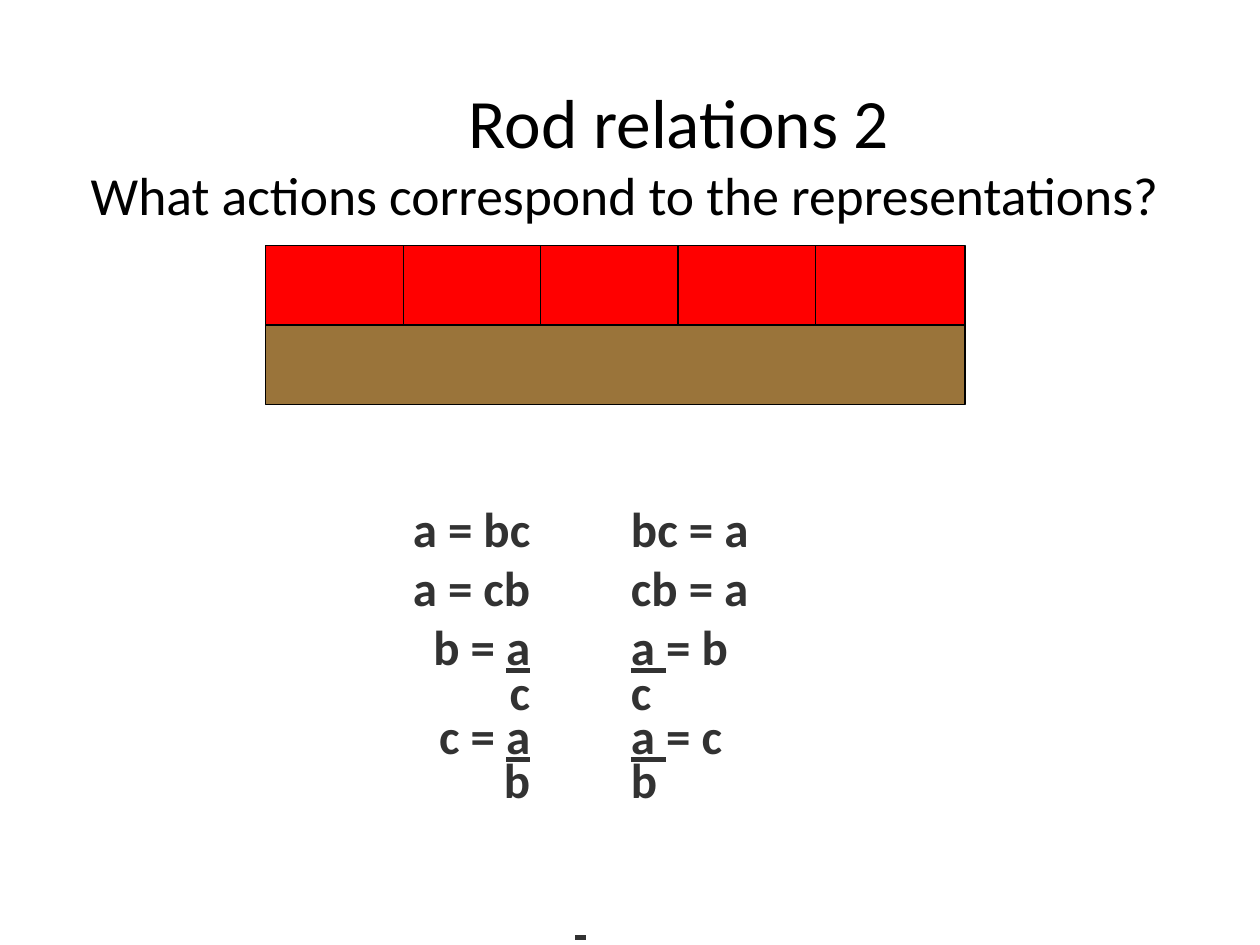
"""Build the "Rod relations 2" slide: a row of rods above paired equations."""
import dataclasses

import lxml.etree
import pptx
import pptx.dml.color
import pptx.enum.shapes
import pptx.enum.text
import pptx.oxml.ns
import pptx.util

Inches = pptx.util.Inches
Pt = pptx.util.Pt
Align = pptx.enum.text.PP_ALIGN


@dataclasses.dataclass(frozen=True)
class Theme:
    """Colours, font and type sizes of the slide."""
    font: str = "Calibri"
    black: str = "000000"
    ink: str = "323232"
    red: str = "FF0000"
    brown: str = "9A743A"
    title: float = 39.6
    subtitle: float = 30.6
    equation: float = 28


THEME = Theme()
TITLE = [("Rod relations 2", THEME.title, 3), ("What actions correspond to the representations?", THEME.subtitle, 0)]

# Underscores enclose underlined text.
EQUATIONS = [
    ("a = bc", "bc = a", 1),
    ("a = cb", "cb = a", 1),
    ("b = _a_", "_a _= b", 1),
    ("c", "c", 0.75),
    ("c = _a_", "_a _= c", 0.75),
    ("b", "b", 0.75),
]
EQUATION_TABS = [("r", 2), ("l", 2.8)]
ROD_COUNT = 5
ROD_LEFT, ROD_TOP, ROD_LENGTH, ROD_HEIGHT = 2.11, 1.95, 5.55, 0.63
ROD_STEP, ROD_OVERLAP = 1.09, 0.03


def format_run(run, size, color, bold=False, underline=False):
    """Apply the theme font to a run."""
    run.font.name = THEME.font
    run.font.size = Pt(size)
    run.font.bold = bold
    run.font.underline = underline
    run.font.color.rgb = pptx.dml.color.RGBColor.from_string(color)


def add_title(slide):
    """Fill the title placeholder with the heading and its question."""
    title = slide.shapes.title
    title.left, title.top, title.width, title.height = map(Inches, (0.62, 0.39, 8.91, 1.64))
    frame = title.text_frame
    frame.auto_size = pptx.enum.text.MSO_AUTO_SIZE.NONE
    frame.vertical_anchor = pptx.enum.text.MSO_ANCHOR.MIDDLE
    frame.text = "\n".join(text for text, _, _ in TITLE)
    for paragraph, (_, size, indent) in zip(frame.paragraphs, TITLE):
        paragraph.alignment = Align.LEFT
        paragraph._p.get_or_add_pPr().set("marL", str(Inches(indent)))
        format_run(paragraph.runs[0], size, THEME.black)


def add_rod(slide, column, row, width, color):
    """Draw one rod on the rod grid."""
    rod = slide.shapes.add_shape(
        pptx.enum.shapes.MSO_SHAPE.RECTANGLE,
        Inches(ROD_LEFT + column * ROD_STEP), Inches(ROD_TOP + row * ROD_HEIGHT),
        Inches(width), Inches(ROD_HEIGHT))
    rod.shadow.inherit = False
    rod.fill.solid()
    rod.fill.fore_color.rgb = pptx.dml.color.RGBColor.from_string(color)
    rod.line.color.rgb = pptx.dml.color.RGBColor.from_string(THEME.black)
    rod.line.width = Pt(0.75)


def add_tabs(paragraph):
    """Align the two equation columns on tab stops."""
    properties = paragraph._p.get_or_add_pPr()
    tabs = lxml.etree.SubElement(properties, pptx.oxml.ns.qn("a:tabLst"))
    for alignment, position in EQUATION_TABS:
        lxml.etree.SubElement(tabs, pptx.oxml.ns.qn("a:tab"), pos=str(Inches(position)), algn=alignment)


def add_marked_runs(paragraph, text):
    """Write text whose underscores switch underlining on and off."""
    for index, part in enumerate(text.split("_")):
        if part:
            run = paragraph.add_run()
            run.text = part
            format_run(run, THEME.equation, THEME.ink, True, index % 2 == 1)


def add_equations(slide):
    """Write the equations in two facing columns, closed by a short rule."""
    frame = slide.shapes.add_textbox(*map(Inches, (2.11, 3.91, 5, 4.7))).text_frame
    frame.word_wrap = True
    for index, (left, right, spacing) in enumerate(EQUATIONS):
        paragraph = frame.add_paragraph() if index else frame.paragraphs[0]
        paragraph.alignment = Align.LEFT
        paragraph.line_spacing = float(spacing)
        add_tabs(paragraph)
        add_marked_runs(paragraph, f"\t{left}\t{right}")
    rule = frame.add_paragraph()
    rule.alignment = Align.CENTER
    rule.line_spacing = 0.75
    rule.space_before = Pt(51)
    add_marked_runs(rule, "_ _")


def main():
    """Create and save the presentation."""
    presentation = pptx.Presentation()
    presentation.slide_width, presentation.slide_height = Inches(10), Inches(7.5)
    slide = presentation.slides.add_slide(presentation.slide_layouts[5])
    add_title(slide)
    add_rod(slide, 0, 1, ROD_LENGTH, THEME.brown)
    add_equations(slide)
    for column in range(ROD_COUNT):
        remaining = ROD_LENGTH - column * ROD_STEP
        width = remaining if column == ROD_COUNT - 1 else ROD_STEP + ROD_OVERLAP
        add_rod(slide, column, 0, width, THEME.red)
    presentation.save("out.pptx")


if __name__ == "__main__":
    main()
